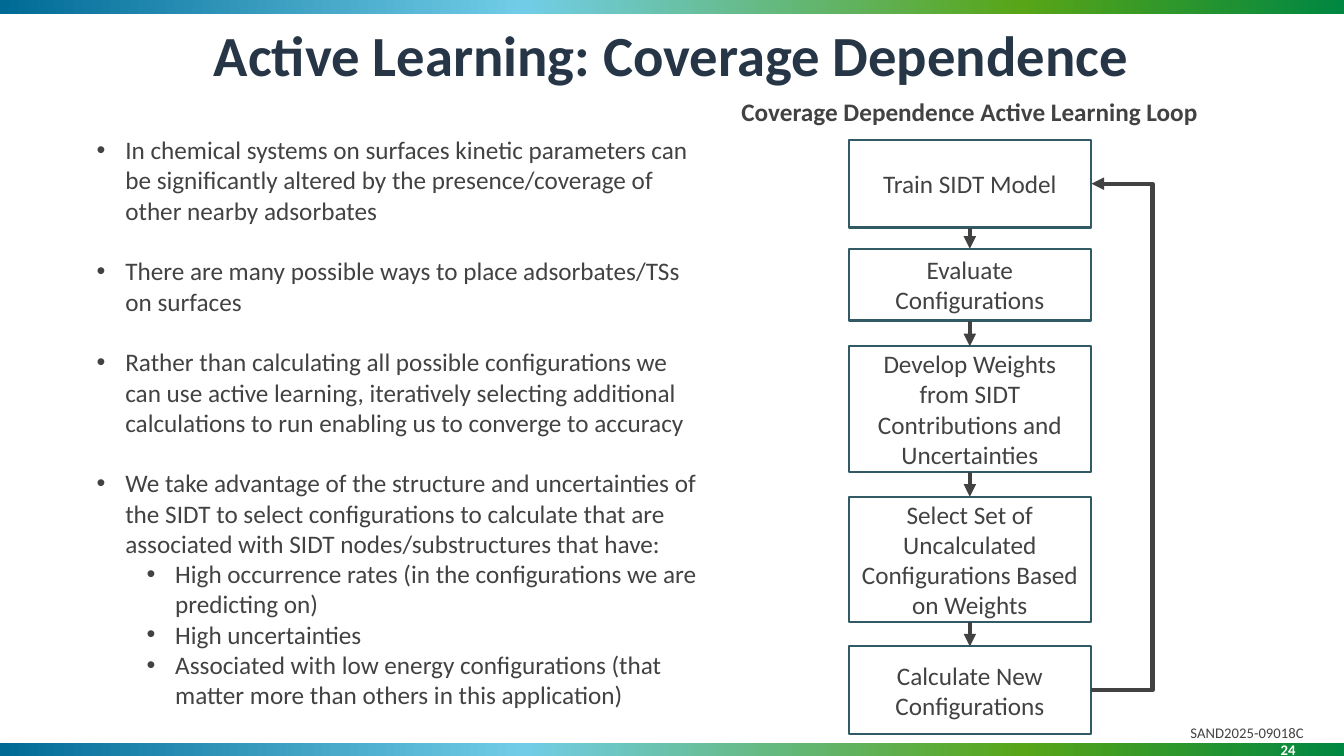
import pptx
import pptx.util
import pptx.dml.color
import pptx.enum.shapes
import pptx.enum.text
import pptx.oxml.ns
from lxml import etree

SCALE = 9144
QN = pptx.oxml.ns.qn
SHAPE = pptx.enum.shapes.MSO_SHAPE
LINK = pptx.enum.shapes.MSO_CONNECTOR
ALIGN = pptx.enum.text.PP_ALIGN
ANCHOR = pptx.enum.text.MSO_ANCHOR

THEME = {
    "font": "Calibri",
    "ink": "424242",
    "navy": "263646",
    "edge": "325A65",
    "white": "FFFFFF",
    "band": [(0, "006A96"), (39, "71CDE7"), (76, "58A517"), (100, "008742")],
    "title": 54,
    "body": 24,
    "small": 14,
    "border": 2,
    "arrow": 4,
}


def px(n):
    return pptx.util.Emu(n * SCALE)


def color(key):
    return pptx.dml.color.RGBColor.from_string(THEME[key])


def apply(item, values):
    for name, value in values.items():
        setattr(item, name, value)


class Deck:
    def __init__(self, width, height):
        self.show = pptx.Presentation()
        apply(self.show, {"slide_width": px(width), "slide_height": px(height)})
        self.slide = self.show.slides.add_slide(self.show.slide_layouts[6])
        self.shapes = self.slide.shapes

    def style(self, para, size="body", ink="ink", bold=False, **form):
        apply(para, form)
        apply(para.font, {"name": THEME["font"], "size": pptx.util.Pt(THEME[size]), "bold": bold})
        para.font.color.rgb = color(ink)

    def band(self, top, width, height):
        bar = self.shapes.add_shape(SHAPE.RECTANGLE, 0, px(top), px(width), px(height))
        bar.shadow.inherit = False
        bar.line.fill.background()
        bar.fill.gradient()
        bar.fill.gradient_angle = 0
        stops = next(bar._element.iter(QN("a:gsLst")))
        for stop in list(stops):
            stops.remove(stop)
        for spot, tone in THEME["band"]:
            stop = etree.SubElement(stops, QN("a:gs"), pos=str(spot * 1000))
            etree.SubElement(stop, QN("a:srgbClr"), val=tone)

    def label(self, area, text, anchor=ANCHOR.TOP, **form):
        frame = self.shapes.add_textbox(*map(px, area)).text_frame
        apply(frame, {"word_wrap": True, "vertical_anchor": anchor, "text": text})
        self.style(frame.paragraphs[0], **form)

    def box(self, area, text):
        box = self.shapes.add_shape(SHAPE.RECTANGLE, *map(px, area))
        box.shadow.inherit = False
        box.fill.solid()
        box.fill.fore_color.rgb = color("white")
        box.line.color.rgb = color("edge")
        box.line.width = pptx.util.Pt(THEME["border"])
        frame = box.text_frame
        apply(frame, {"word_wrap": True, "vertical_anchor": ANCHOR.MIDDLE, "text": text})
        self.style(frame.paragraphs[0], alignment=ALIGN.CENTER)
        return box

    def arrow(self, kind, start, end):
        link = self.shapes.add_connector(kind, *map(px, start + end))
        link.line.color.rgb = color("ink")
        link.line.width = pptx.util.Pt(THEME["arrow"])
        etree.SubElement(link.line._get_or_add_ln(), QN("a:tailEnd"), type="triangle")
        etree.SubElement(link._element.spPr, QN("a:effectLst"))
        return link

    def join(self, upper, lower):
        link = self.arrow(LINK.STRAIGHT, (0, 0), (0, 0))
        link.begin_connect(upper, 2)
        link.end_connect(lower, 0)

    def loop(self, start, end, reach):
        link = self.arrow(LINK.ELBOW, start, end)
        bend = reach * 100000 // (end[0] - start[0])
        guides = next(link._element.iter(QN("a:avLst")))
        etree.SubElement(guides, QN("a:gd"), name="adj1", fmla=f"val {bend}")

    def points(self, area, items, gap):
        frame = self.shapes.add_textbox(*map(px, area)).text_frame
        frame.word_wrap = True
        for rank, (level, text) in enumerate(items):
            para = frame.paragraphs[0] if rank == 0 else frame.add_paragraph()
            para.text = text
            props = para._p.get_or_add_pPr()
            props.set("marL", str(px((38, 104)[level])))
            props.set("indent", str(px(-38)))
            etree.SubElement(props, QN("a:buFont"), typeface="Arial")
            etree.SubElement(props, QN("a:buChar"), char="•")
            space = gap if rank and level == 0 else 0
            self.style(para, level=level, space_before=pptx.util.Pt(space))


STEPS = [
    (185, 116, "Train SIDT Model"),
    (329, 95, "Evaluate Configurations"),
    (458, 166, "Develop Weights from SIDT Contributions and Uncertainties"),
    (657, 166, "Select Set of Uncalculated Configurations Based on Weights"),
    (855, 116, "Calculate New Configurations"),
]

POINTS = [
    (0, "In chemical systems on surfaces kinetic parameters can be significantly altered "
        "by the presence/coverage of other nearby adsorbates"),
    (0, "There are many possible ways to place adsorbates/TSs on surfaces"),
    (0, "Rather than calculating all possible configurations we can use active learning, "
        "iteratively selecting additional calculations to run enabling us to converge to accuracy"),
    (0, "We take advantage of the structure and uncertainties of the SIDT to select configurations "
        "to calculate that are associated with SIDT nodes/substructures that have:"),
    (1, "High occurrence rates (in the configurations we are predicting on)"),
    (1, "High uncertainties"),
    (1, "Associated with low energy configurations (that matter more than others in this application)"),
]


def main():
    deck = Deck(1778, 1000)
    for top in (983, -2):
        deck.band(top, 1778, 20)
    deck.label((1660, 963, 88, 56), "24", ANCHOR.MIDDLE, size="small", ink="white",
               bold=True, alignment=ALIGN.CENTER)
    deck.label((1565, 952, 189, 34), "SAND2025-09018C", size="small")
    deck.label((16, 20, 1744, 115), "Active Learning: Coverage Dependence", ANCHOR.MIDDLE,
               size="title", ink="navy", bold=True, alignment=ALIGN.CENTER, line_spacing=0.9)
    left, width = 1123, 320
    boxes = [deck.box((left, top, width, height), text) for top, height, text in STEPS]
    for upper, lower in zip(boxes, boxes[1:]):
        deck.join(upper, lower)
    side = left + width
    first, last = [top + height // 2 for top, height, _ in (STEPS[0], STEPS[-1])]
    deck.loop((side, last), (side + 1, first), 83)
    deck.label((948, 122, 669, 50), "Coverage Dependence Active Learning Loop",
               bold=True, alignment=ALIGN.CENTER)
    deck.points((118, 173, 824, 818), POINTS, 29)
    deck.show.save("out.pptx")


if __name__ == "__main__":
    main()
